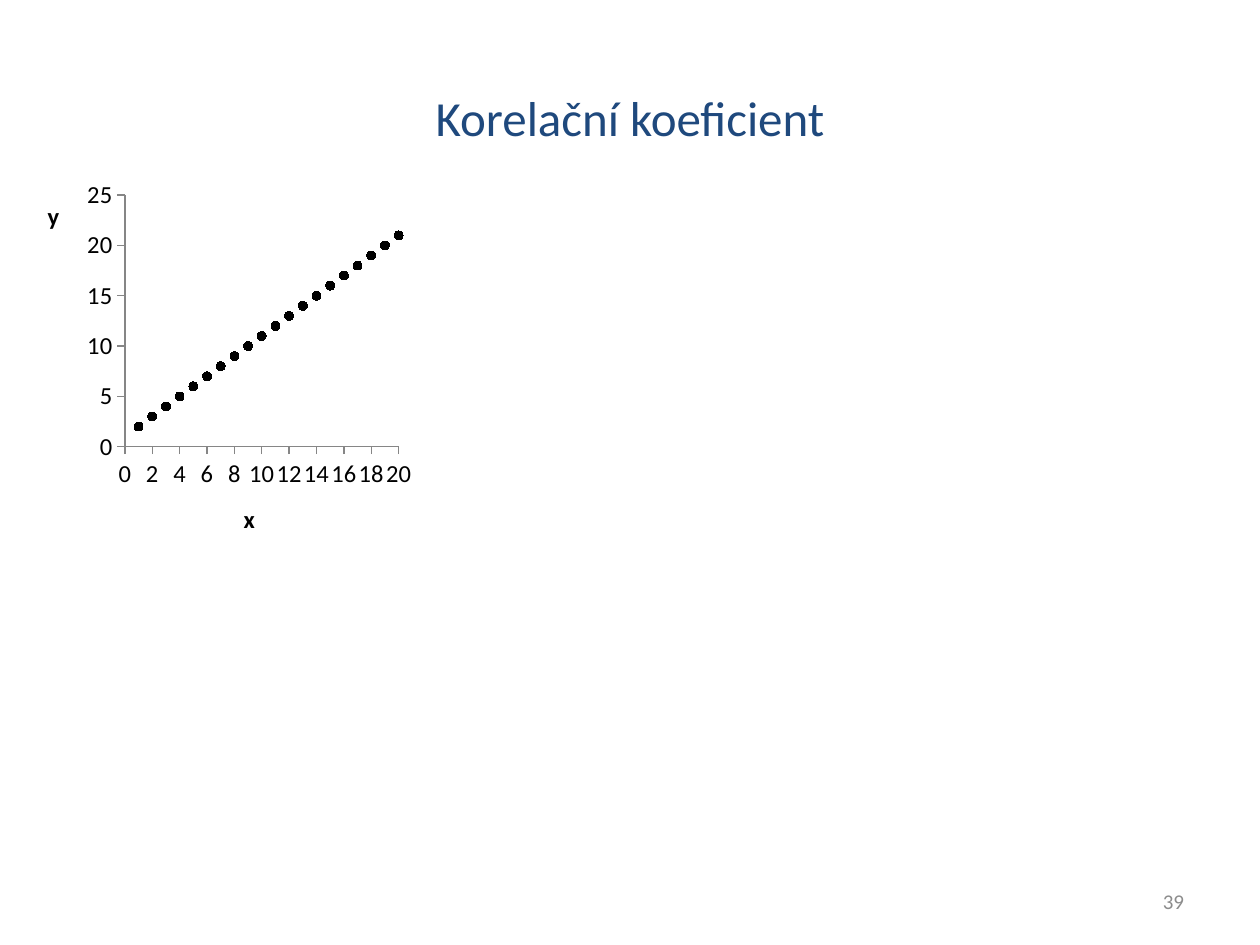
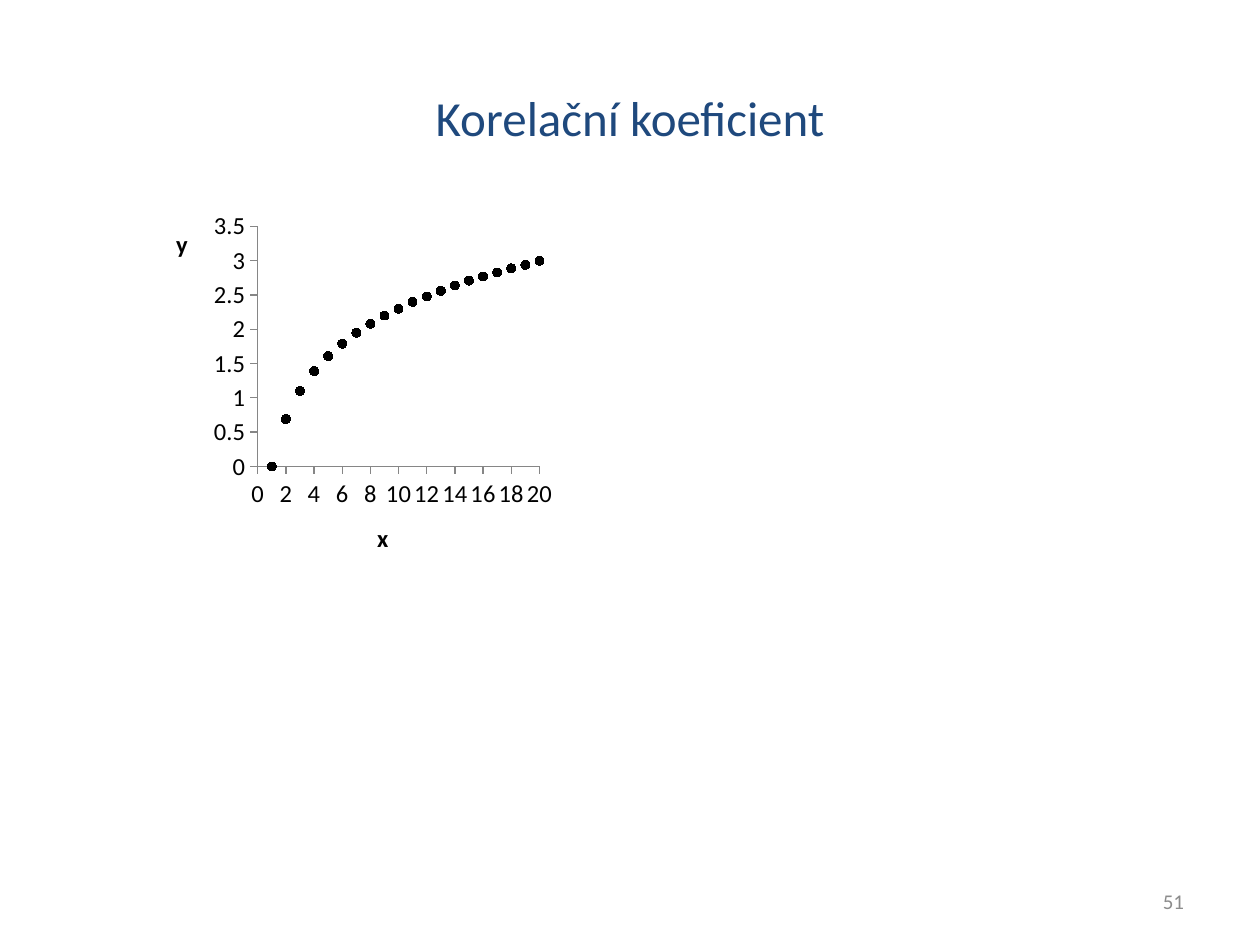
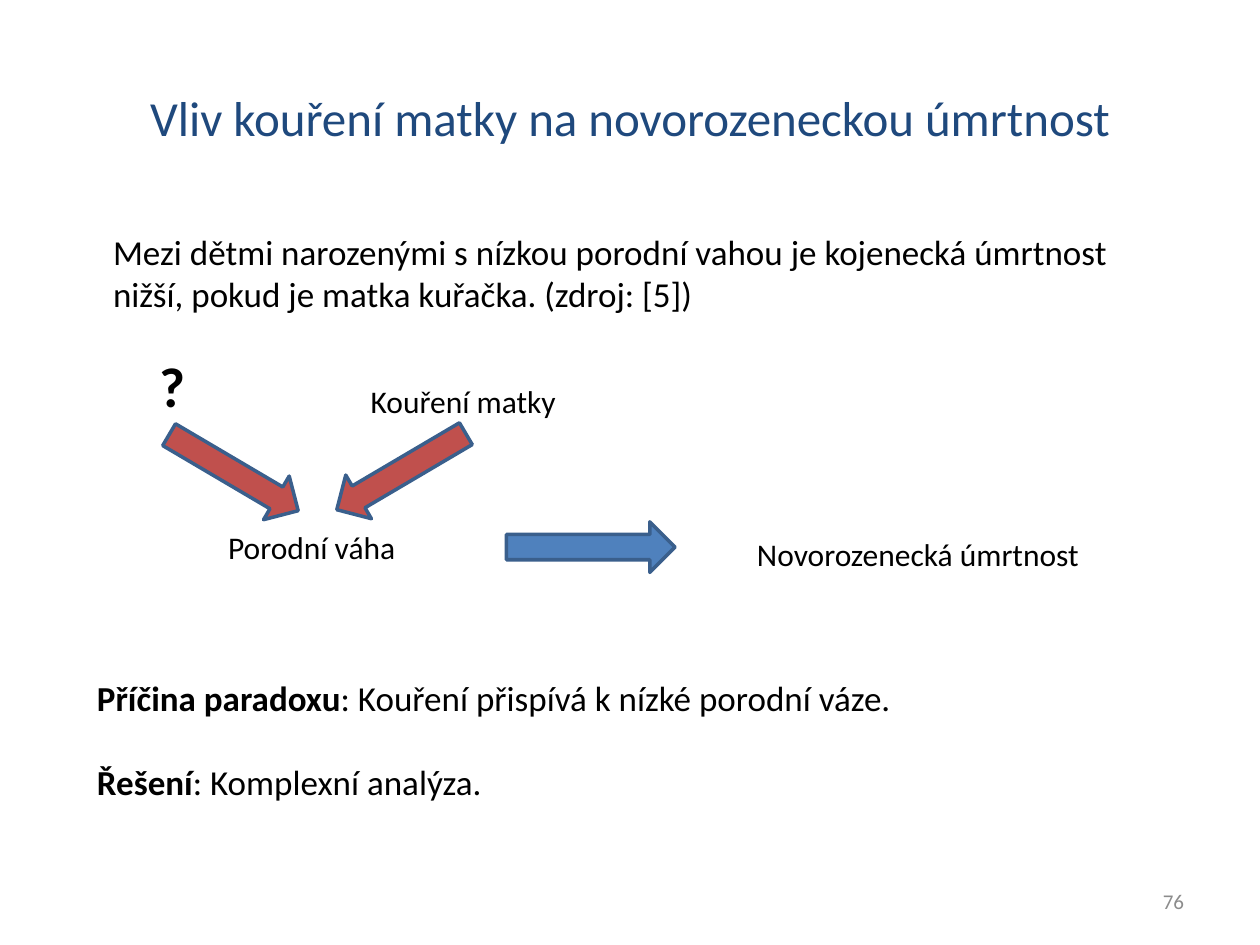
from math import log

from lxml.etree import SubElement
from pptx import Presentation
from pptx.chart.data import XyChartData
from pptx.dml.color import RGBColor
from pptx.enum.chart import XL_CHART_TYPE, XL_MARKER_STYLE, XL_TICK_MARK
from pptx.enum.shapes import MSO_SHAPE
from pptx.enum.text import MSO_ANCHOR, PP_ALIGN
from pptx.oxml.ns import qn
from pptx.util import Cm, Pt

FONT = "Calibri"
BLACK, NAVY, GREY, AXIS = "000000", "1F497D", "8C8C8C", "868686"
BLUE, RED, EDGE = "4F81BD", "C0504D", "3A5F8C"
TITLE = {"name": FONT, "size": Pt(28), "bold": False}
TEXT = {"name": FONT, "size": Pt(20), "bold": False}
LABEL = {**TEXT, "size": Pt(18)}
MARK = {**TEXT, "size": Pt(32), "bold": True}
FOOT = {**TEXT, "size": Pt(12)}
TICK = {"name": FONT, "size": Pt(14), "bold": False}


def paint(color, code):
    color.rgb = RGBColor.from_string(code)


def style(font, form, code=BLACK):
    for key, value in form.items():
        setattr(font, key, value)
    paint(font.color, code)


def place(shape, spot):
    for key, value in zip(("left", "top", "width", "height"), spot):
        setattr(shape, key, Cm(value))


def write(para, text, form, code=BLACK):
    run = para.add_run()
    run.text = text
    style(run.font, form, code)


def add_text(slide, spot, text, form, code=BLACK, align=PP_ALIGN.LEFT, anchor=MSO_ANCHOR.TOP):
    frame = slide.shapes.add_textbox(*map(Cm, spot)).text_frame
    frame.word_wrap = True
    frame.vertical_anchor = anchor
    para = frame.paragraphs[0]
    para.alignment = align
    write(para, text, form, code)


def add_page(deck, layout, title, number):
    slide = deck.slides.add_slide(deck.slide_layouts[layout])
    place(slide.shapes.title, (1.27, 0.76, 22.86, 3.18))
    para = slide.shapes.title.text_frame.paragraphs[0]
    para.alignment = PP_ALIGN.CENTER
    write(para, title, TITLE, NAVY)
    add_text(slide, (18.2, 17.65, 5.92, 1.02), number, FOOT, GREY, PP_ALIGN.RIGHT, MSO_ANCHOR.MIDDLE)
    return slide


def fill_list(slide, spot, items):
    body = slide.placeholders[1]
    place(body, spot)
    frame = body.text_frame
    for i, (head, rest) in enumerate(items):
        para = frame.add_paragraph() if i else frame.paragraphs[0]
        para.space_before = Pt(24 if i else 0)
        props = para._p.get_or_add_pPr()
        for key in ("marL", "indent"):
            props.set(key, "0")
        SubElement(props, qn("a:buNone"))
        write(para, head, {**TEXT, "bold": True})
        write(para, rest, TEXT)


def add_arrow(slide, spot, code, turn=0, flip=False):
    arrow = slide.shapes.add_shape(MSO_SHAPE.RIGHT_ARROW, *map(Cm, spot))
    arrow.shadow.inherit = False
    arrow.fill.solid()
    paint(arrow.fill.fore_color, code)
    paint(arrow.line.color, EDGE)
    arrow.line.width = Pt(2)
    arrow.rotation = turn
    if flip:
        arrow._element.spPr.xfrm.set("flipH", "1")


def set_layout(node, spot, inner=False):
    for old in node.findall(qn("c:layout")):
        node.remove(old)
    layout = node.makeelement(qn("c:layout"))
    manual = SubElement(layout, qn("c:manualLayout"))
    pairs = [("layoutTarget", "inner")] if inner else []
    pairs += [("xMode", "edge"), ("yMode", "edge")]
    pairs += zip("xywh", spot)
    for key, value in pairs:
        SubElement(manual, qn("c:" + key)).set("val", str(value))
    if inner:
        node.insert(0, layout)
    else:
        node.find(qn("c:tx")).addnext(layout)


def set_axis(axis, name):
    axis.has_major_gridlines = False
    axis.major_tick_mark = XL_TICK_MARK.OUTSIDE
    axis.minor_tick_mark = XL_TICK_MARK.NONE
    paint(axis.format.line.color, AXIS)
    axis.format.line.width = Pt(0.75)
    style(axis.tick_labels.font, TICK)
    write(axis.axis_title.text_frame.paragraphs[0], name, {**TICK, "bold": True})


def add_plot(slide, spot, values, area):
    data = XyChartData()
    series = data.add_series("Series 1")
    for x, y in enumerate(values, 1):
        series.add_data_point(x, y)
    chart = slide.shapes.add_chart(XL_CHART_TYPE.XY_SCATTER, *map(Cm, spot), data).chart
    chart.has_legend = False
    chart.has_title = False
    style(chart.font, TICK)
    across, up = chart.category_axis, chart.value_axis
    set_axis(across, "x")
    set_axis(up, "y")
    for key, value in {"minimum_scale": 0, "maximum_scale": 20, "major_unit": 2}.items():
        setattr(across, key, value)
    title = up.axis_title
    title.text_frame._txBody.bodyPr.set("rot", "0")
    set_layout(title._element, (0.02, 0.05))
    set_layout(chart._chartSpace.chart.plotArea, area, True)
    plot = chart.plots[0]
    plot.vary_by_categories = False
    dots = plot.series[0]
    dots.smooth = False
    dots.format.line.fill.background()
    dots.marker.style = XL_MARKER_STYLE.CIRCLE
    dots.marker.size = 5
    dots.marker.format.fill.solid()
    paint(dots.marker.format.fill.fore_color, BLACK)
    paint(dots.marker.format.line.color, BLACK)


def main():
    deck = Presentation()
    deck.slide_width, deck.slide_height = Cm(25.4), Cm(19.05)
    steps = range(1, 21)

    line = add_page(deck, 5, "Korelační koeficient", "39")
    add_plot(line, (0.71, 3.53, 8, 7.62), [x + 1 for x in steps], (0.226, 0.053, 0.69, 0.666))

    curve = add_page(deck, 5, "Korelační koeficient", "51")
    add_plot(curve, (3.3, 4.11, 8, 7.62), [round(log(x), 2) for x in steps], (0.237, 0.06, 0.71, 0.635))

    cause = add_page(deck, 1, "Vliv kouření matky na novorozeneckou úmrtnost", "76")
    fill_list(cause, (1.7, 13.51, 21.41, 2.82), [
        ("Příčina paradoxu", ": Kouření přispívá k nízké porodní váze."),
        ("Řešení", ": Komplexní analýza."),
    ])
    add_text(cause, (2.03, 4.52, 21.8, 2.82),
             "Mezi dětmi narozenými s nízkou porodní vahou je kojenecká úmrtnost "
             "nižší, pokud je matka kuřačka. (zdroj: [5])", TEXT)
    for left, top, width, text in (
        (6.76, 7.57, 5.16, "Kouření matky"),
        (2.08, 10.52, 8.41, "Porodní váha"),
        (14.3, 10.67, 8.41, "Novorozenecká úmrtnost"),
    ):
        add_text(cause, (left, top, width, 1.02), text, LABEL, align=PP_ALIGN.CENTER)
    add_text(cause, (2.97, 6.96, 1.8, 1.63), "?", MARK)
    add_arrow(cause, (10.21, 10.52, 3.4, 1.02), BLUE)
    add_arrow(cause, (3.2, 9.02, 3.02, 1.02), RED, 30.5)
    add_arrow(cause, (6.58, 9, 3.02, 1.02), RED, 329.5, True)

    deck.save("out.pptx")


if __name__ == "__main__":
    main()
